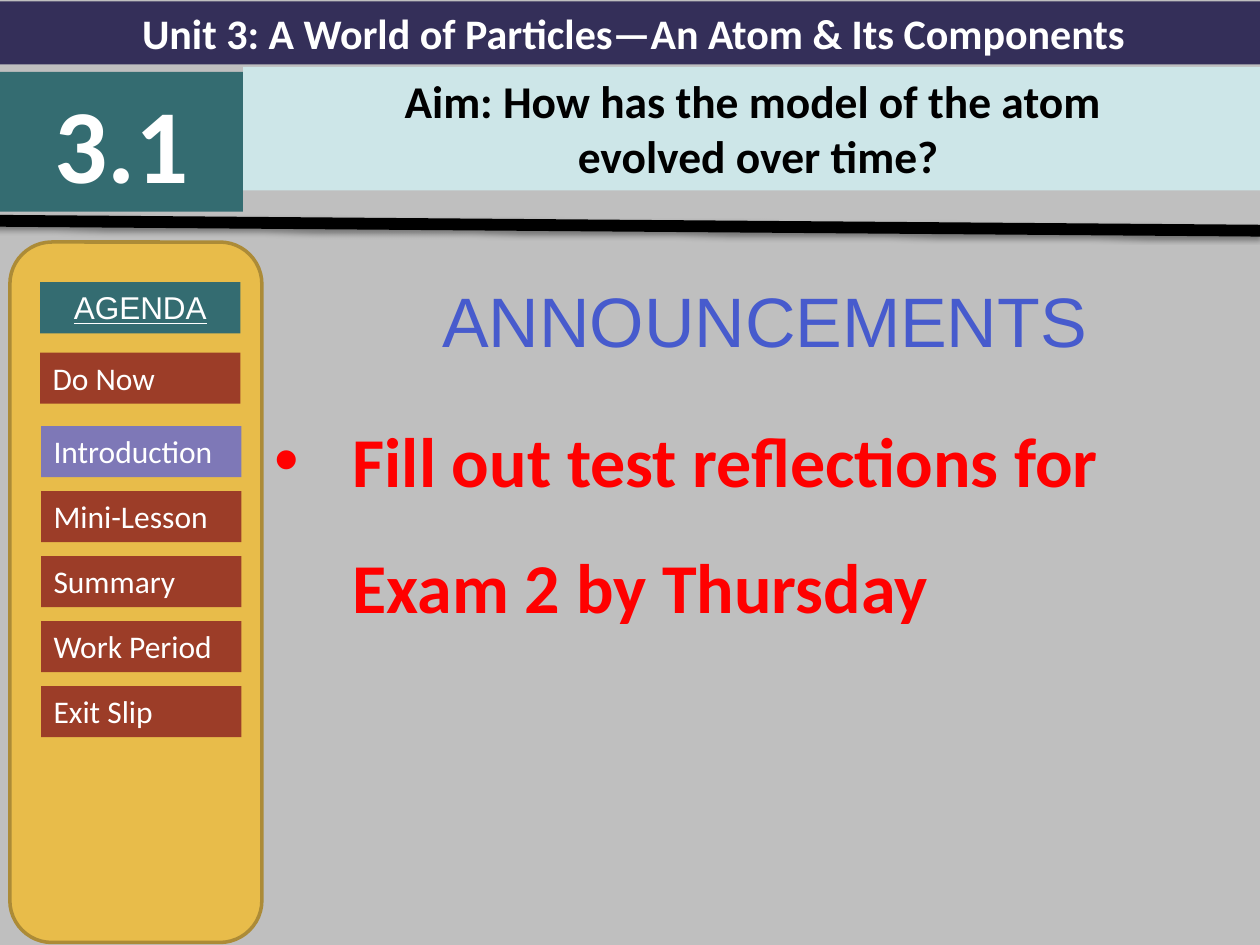
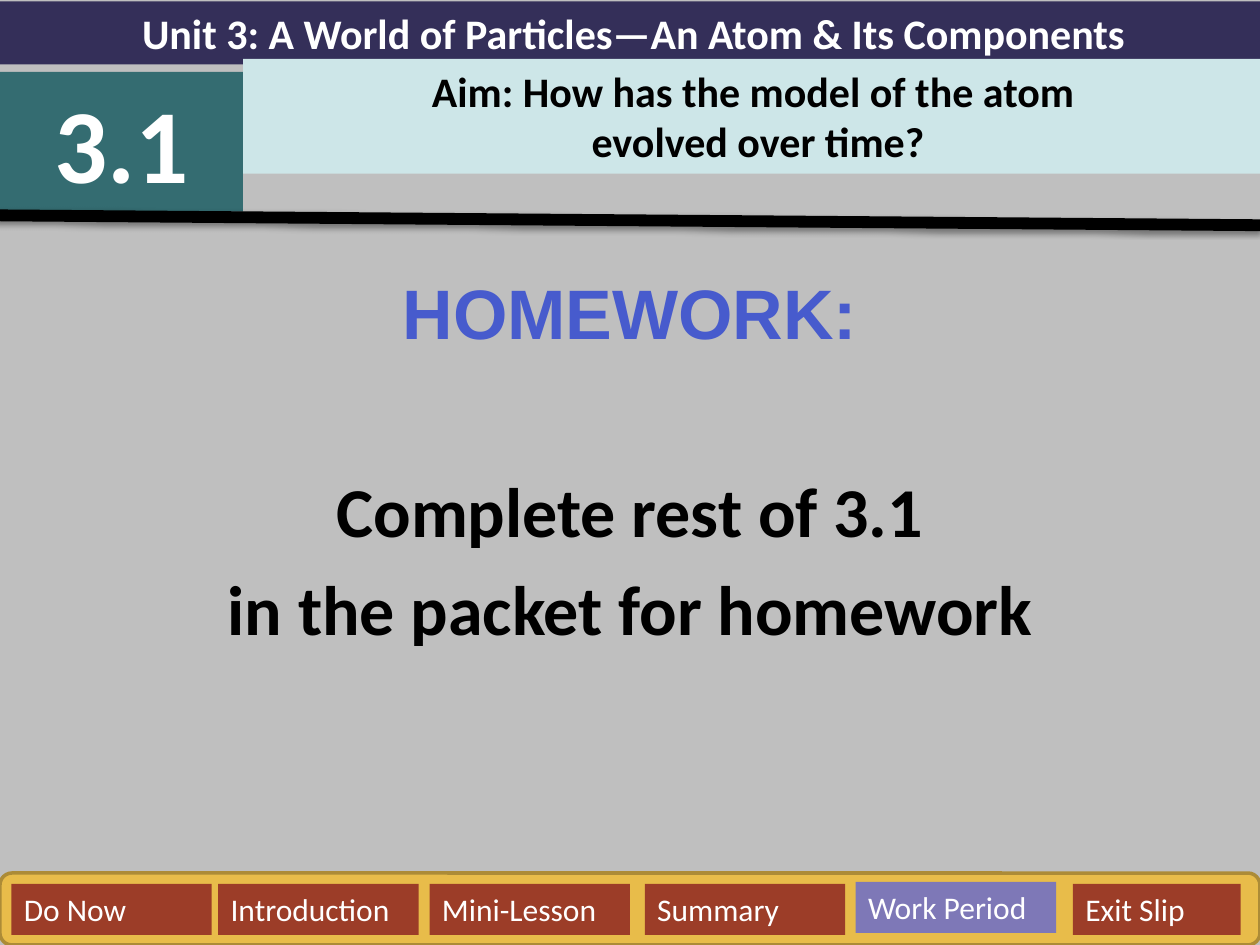
from dataclasses import dataclass

from lxml import etree
from pptx import Presentation
from pptx import util as u
from pptx.dml.color import RGBColor
from pptx.enum import shapes, text
from pptx.oxml import ns


@dataclass(frozen=True)
class Theme:
    background: str = "BFBFBF"
    unit: str = "342F59"
    teal: str = "346C71"
    aim: str = "CDE6E8"
    gold: str = "E8BC4A"
    gold_edge: str = "AC8B37"
    step: str = "9C3D28"
    active: str = "7E78B7"
    heading: str = "475BCD"
    alert: str = "FF0000"
    black: str = "000000"
    white: str = "FFFFFF"
    body_font: str = "Calibri"
    heading_font: str = "Arial"
    button_size: int = 18
    unit_size: int = 24
    body_size: int = 40
    number_size: int = 60


THEME = Theme()
UNIT_TITLE = "Unit 3: A World of Particles—An Atom & Its Components"
AIM_LINES = ["Aim: How has the model of the atom", " evolved over time?"]
STEPS = ["Do Now", "Introduction", "Mini-Lesson", "Summary", "Work Period", "Exit Slip"]
BUTTON_WIDTH = 4.04
BUTTON_HEIGHT = 1.03


def color(value):
    return RGBColor.from_string(value)


def style_paragraph(paragraph, size, ink, bold=False, font=THEME.body_font, centered=True):
    paragraph.alignment = text.PP_ALIGN.CENTER if centered else text.PP_ALIGN.LEFT
    paragraph.font.name = font
    paragraph.font.size = u.Pt(size)
    paragraph.font.bold = bold
    paragraph.font.color.rgb = color(ink)


def add_block(slide, box, fill, kind=shapes.MSO_SHAPE.RECTANGLE):
    shape = slide.shapes.add_shape(kind, *map(u.Cm, box))
    shape.shadow.inherit = False
    shape.fill.solid()
    shape.fill.fore_color.rgb = color(fill)
    shape.line.fill.background()
    return shape


def add_label(slide, box, fill, lines, size, ink=THEME.white, **style):
    shape = add_block(slide, box, fill)
    frame = shape.text_frame
    frame.word_wrap = True
    frame.vertical_anchor = text.MSO_ANCHOR.TOP
    frame.text = "\n".join(lines)
    for paragraph in frame.paragraphs:
        style_paragraph(paragraph, size, ink, **style)
    return shape


def add_panel(slide, box):
    panel = add_block(slide, box, THEME.gold, shapes.MSO_SHAPE.ROUNDED_RECTANGLE)
    panel.line.color.rgb = color(THEME.gold_edge)
    panel.line.width = u.Pt(2)


def add_step(slide, left, top, step, active_step, width=BUTTON_WIDTH):
    fill = THEME.active if step == active_step else THEME.step
    add_label(slide, (left, top, width, BUTTON_HEIGHT), fill, [step],
              THEME.button_size, centered=False)


def add_divider(slide, top):
    ends = map(u.Cm, (-0.13, top, 25.4, top + 0.2))
    divider = slide.shapes.add_connector(shapes.MSO_CONNECTOR.STRAIGHT, *ends)
    divider.line.color.rgb = color(THEME.black)
    divider.line.width = u.Pt(6.75)
    effects = etree.SubElement(divider._element.spPr, ns.qn("a:effectLst"))
    shadow = etree.SubElement(effects, ns.qn("a:outerShdw"), blurRad=str(u.Pt(3.1)),
                              dist=str(u.Pt(1.6)), dir="5400000", rotWithShape="0")
    shade = etree.SubElement(shadow, ns.qn("a:srgbClr"), val=THEME.black)
    etree.SubElement(shade, ns.qn("a:alpha"), val="38000")


def add_header(slide, aim_top, aim_height, aim_size, divider_top):
    add_label(slide, (0, 0.03, 25.55, 1.27), THEME.unit, [UNIT_TITLE],
              THEME.unit_size, bold=True)
    add_label(slide, (0, 1.45, 4.9, 2.82), THEME.teal, ["3.1"],
              THEME.number_size, bold=True)
    add_label(slide, (4.9, aim_top, 20.57, aim_height), THEME.aim, AIM_LINES,
              aim_size, ink=THEME.black, bold=True)
    add_divider(slide, divider_top)


def add_message(slide, left, width, heading, lines, ink, bold_heading):
    box = slide.shapes.add_textbox(*map(u.Cm, (left, 5.18, width, 13.87)))
    frame = box.text_frame
    frame.word_wrap = True
    frame.margin_top = u.Cm(0.25)
    frame.text = "\n".join([heading, *lines])
    title, *body = frame.paragraphs
    style_paragraph(title, THEME.body_size, THEME.heading, bold_heading, THEME.heading_font)
    for paragraph in body:
        style_paragraph(paragraph, THEME.body_size, ink, bold=True)
        paragraph.space_before = u.Pt(8)
    return title, body


def add_bullet(paragraph, indent):
    paragraph.alignment = text.PP_ALIGN.LEFT
    properties = paragraph._p.get_or_add_pPr()
    properties.set("marL", str(u.Cm(indent)))
    properties.set("indent", str(-u.Cm(indent)))
    bullet_font = etree.Element(ns.qn("a:buFont"), typeface=THEME.heading_font)
    bullet = etree.Element(ns.qn("a:buChar"), char="•")
    properties.find(ns.qn("a:defRPr")).addprevious(bullet_font)
    bullet_font.addnext(bullet)


def add_agenda(slide, active_step):
    add_panel(slide, (0.2, 4.88, 5.08, 14.12))
    agenda = add_label(slide, (0.81, 5.69, BUTTON_WIDTH, BUTTON_HEIGHT), THEME.teal,
                       ["AGENDA"], THEME.button_size, font=THEME.heading_font)
    agenda.text_frame.paragraphs[0].font.underline = True
    first, *others = STEPS
    add_step(slide, 0.81, 7.11, first, active_step)
    for row, step in enumerate(others):
        add_step(slide, 0.83, 8.59 + 1.31 * row, step, active_step)


def add_step_bar(slide, active_step):
    add_panel(slide, (0, 17.6, 25.4, 1.45))
    lefts = [0.23, 4.4, 8.66, 13, 17.25, 21.63]
    for left, step in zip(lefts, STEPS):
        top = 17.78 if step == active_step else 17.82
        width = 3.38 if step == STEPS[-1] else BUTTON_WIDTH
        add_step(slide, left, top, step, active_step, width)


def add_slide(presentation):
    slide = presentation.slides.add_slide(presentation.slide_layouts[6])
    slide.background.fill.solid()
    slide.background.fill.fore_color.rgb = color(THEME.background)
    return slide


def add_announcements(presentation):
    slide = add_slide(presentation)
    title, body = add_message(slide, 5.28, 20.27, "ANNOUNCEMENTS",
                              ["Fill out test reflections for Exam 2 by Thursday"],
                              THEME.alert, bold_heading=False)
    title.line_spacing = 1.1
    body[0].line_spacing = 1.5
    add_bullet(body[0], 1.58)
    add_header(slide, aim_top=1.35, aim_height=2.49, aim_size=26, divider_top=4.45)
    add_agenda(slide, "Introduction")


def add_homework(presentation):
    slide = add_slide(presentation)
    _, body = add_message(slide, 0, 25.4, "HOMEWORK:",
                          ["Complete rest of 3.1", "in the packet for homework"],
                          THEME.black, bold_heading=True)
    body[0].space_before = u.Pt(65)
    add_header(slide, aim_top=1.19, aim_height=2.31, aim_size=24, divider_top=4.34)
    add_step_bar(slide, "Work Period")


def main():
    presentation = Presentation()
    presentation.slide_width = u.Cm(25.4)
    presentation.slide_height = u.Cm(19.05)
    add_announcements(presentation)
    add_homework(presentation)
    presentation.save("out.pptx")


if __name__ == "__main__":
    main()
